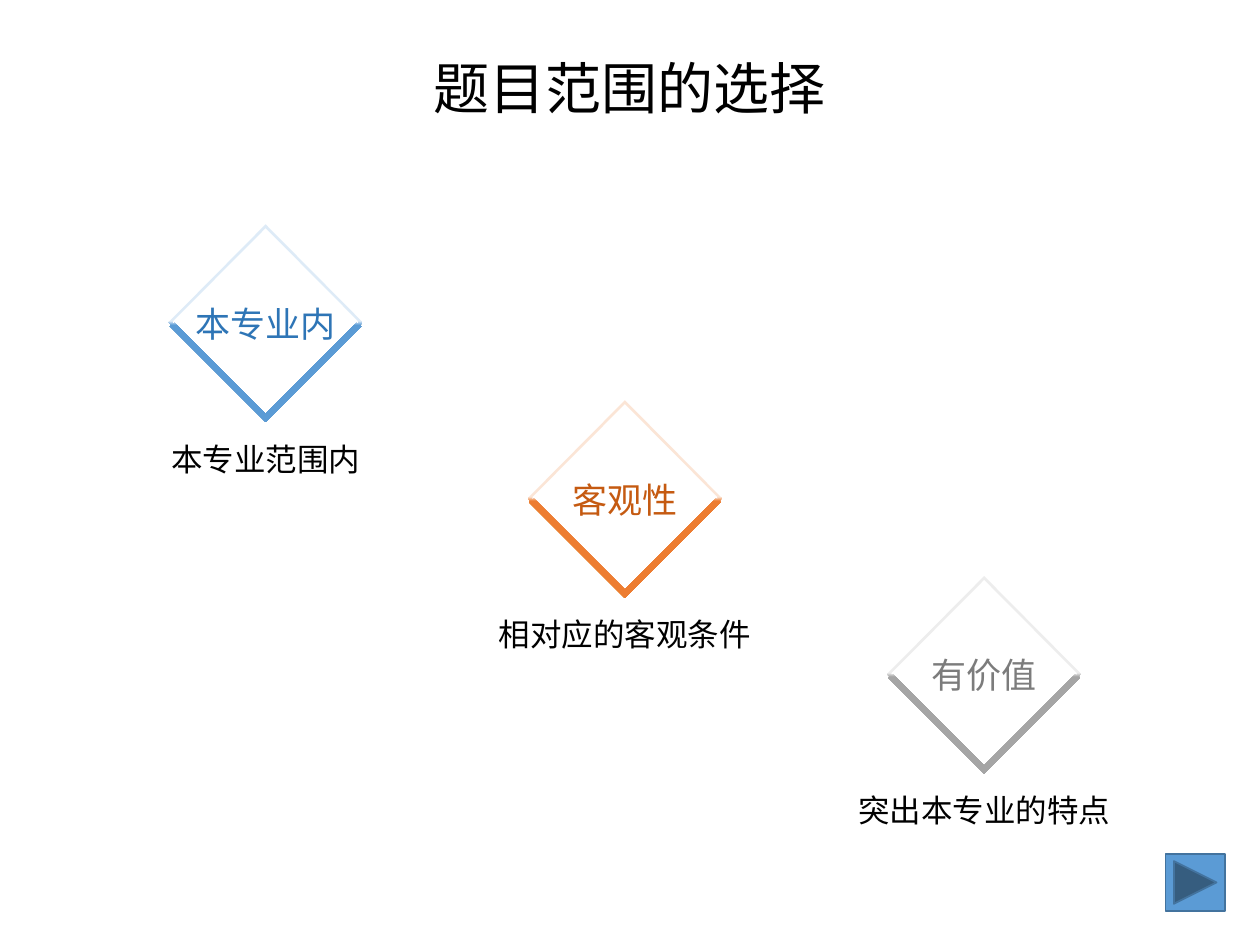
from copy import deepcopy
from pptx import Presentation
from pptx.dml.color import RGBColor
from pptx.enum.shapes import MSO_SHAPE
from pptx.enum.text import MSO_ANCHOR, PP_ALIGN
from pptx.oxml.ns import qn
from pptx.util import Pt
from lxml.etree import SubElement

COLORS = {
    "black": "000000",
    "blue": "5B9BD5", "blue pale": "DEEBF7", "blue deep": "2E75B6",
    "orange": "ED7D31", "orange pale": "FBE5D6", "orange deep": "C55A11",
    "gray": "A5A5A5", "gray pale": "EDEDED", "gray deep": "7C7C7C",
    "edge": "43739E",
}
SANS = "Noto Sans CJK SC"
OUTER = [(0, 0), (55.5, 56), (54, 57.6), (54.7, 58.3), (0, 113)]
INNER = [(0, 2.2), (53.5, 56), (52.6, 56.8), (52, 56.2), (0, 108.2)]
ITEMS = [
    ("blue", "本专业内", "本专业范围内"),
    ("orange", "客观性", "相对应的客观条件"),
    ("gray", "有价值", "突出本专业的特点"),
]


def tint(name):
    return RGBColor.from_string(COLORS[name])


def assign(target, values):
    for key, value in values.items():
        setattr(target, key, value)


def mirror(half):
    return half + [(-x, y) for x, y in half[-2:0:-1]]


class Deck:
    def __init__(self):
        self.show = Presentation()
        assign(self.show, {"slide_width": Pt(720), "slide_height": Pt(540)})
        self.slide = self.show.slides.add_slide(self.show.slide_layouts[6])
        self.shapes = self.slide.shapes

    def letter(self, shape, text, size, color, face=SANS, frame=None, para=None):
        body = shape.text_frame
        assign(body, {"word_wrap": True, **(frame or {})})
        line = body.paragraphs[0]
        assign(line, {"alignment": PP_ALIGN.CENTER, **(para or {})})
        run = line.add_run()
        run.text = text
        assign(run.font, {"size": Pt(size), "name": face})
        run.font.color.rgb = tint(color)
        SubElement(run.font._element, qn("a:ea"), typeface=SANS)

    def label(self, box, text, size, **style):
        shape = self.shapes.add_textbox(*map(Pt, box))
        self.letter(shape, text, size, "black", **style)

    def diamond(self, mid, top, hue, text):
        rings = [
            [(Pt(mid + x), Pt(top + y)) for x, y in ring]
            for ring in (mirror(INNER)[::-1], mirror(OUTER))
        ]
        pen = self.shapes.build_freeform(*rings[0][0], scale=1.0)
        pen.add_line_segments(rings[0][1:])
        pen.move_to(*rings[1][0])
        pen.add_line_segments(rings[1][1:])
        shape = pen.convert_to_shape()
        shape.shadow.inherit = False
        shape.line.fill.background()
        self.blend(shape, [(0, hue + " pale"), (0.49, hue + " pale"),
                           (0.51, hue), (1, hue)])
        sides = ("left", "top", "right", "bottom")
        frame = {"margin_" + side: 0 for side in sides}
        frame["vertical_anchor"] = MSO_ANCHOR.MIDDLE
        self.letter(shape, text, 20, hue + " deep", "Calibri", frame)

    def blend(self, shape, steps):
        shape.fill.gradient()
        shape.fill.gradient_angle = 270
        stops = shape._element.spPr.find(".//" + qn("a:gsLst"))
        while len(stops) < len(steps):
            stops.append(deepcopy(stops[0]))
        for stop, (place, name) in zip(shape.fill.gradient_stops, steps):
            stop.position = place
            stop.color.rgb = tint(name)

    def button(self, box, fill, edge):
        kind = MSO_SHAPE.ACTION_BUTTON_FORWARD_OR_NEXT
        shape = self.shapes.add_shape(kind, *map(Pt, box))
        shape.shadow.inherit = False
        shape.fill.solid()
        shape.fill.fore_color.rgb = tint(fill)
        shape.line.color.rgb = tint(edge)
        shape.line.width = Pt(1)


def main():
    deck = Deck()
    deck.label((54, 26.5, 612, 46), "题目范围的选择", 32,
               frame={"vertical_anchor": MSO_ANCHOR.MIDDLE})
    for step, (hue, title, note) in enumerate(ITEMS):
        mid = 151.8 + 205.3 * step
        top = 128.2 + 100.5 * step
        deck.diamond(mid, top, hue, title)
        deck.label((mid - 88, top + 113, 176, 35), note, 18,
                   para={"line_spacing": 1.3})
    deck.button((666, 488, 34, 32.5), "blue", "edge")
    deck.show.save("out.pptx")


if __name__ == "__main__":
    main()
